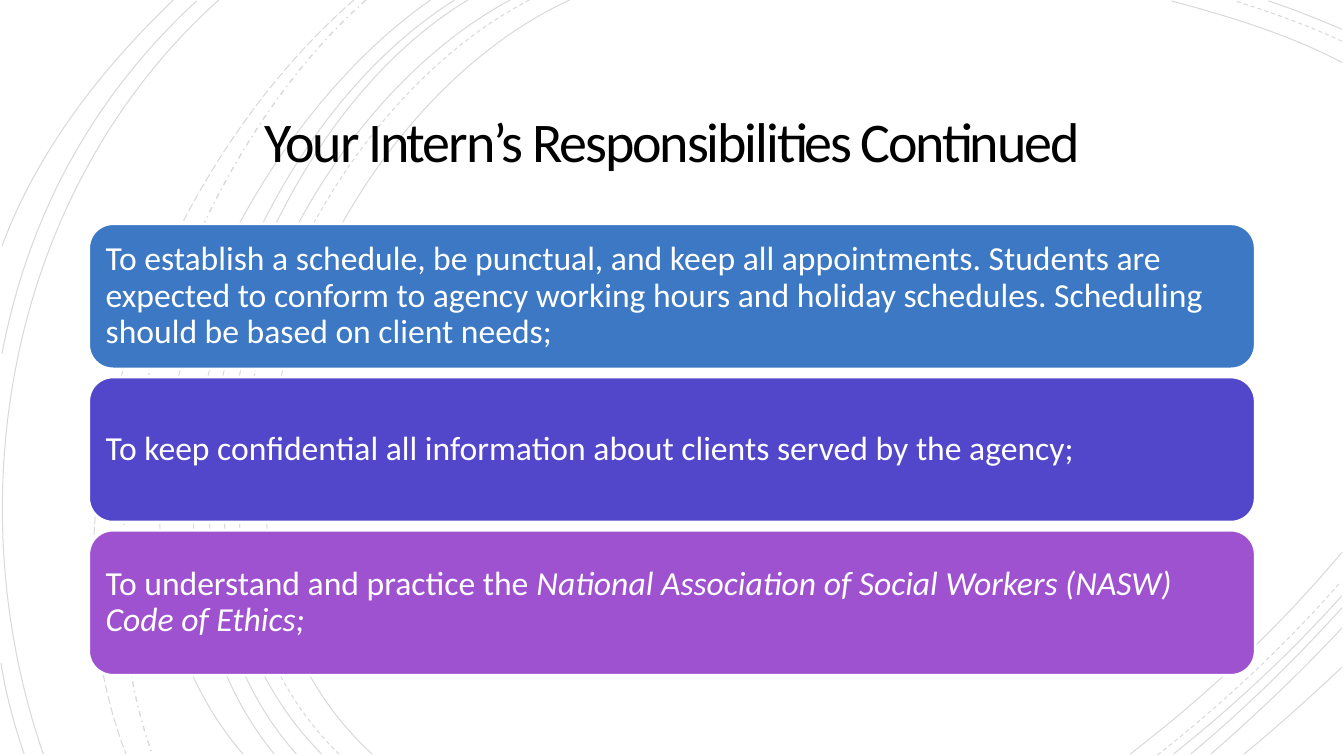
from pptx import Presentation, util as u
from pptx.dml.color import RGBColor
from pptx.enum import dml, shapes, text
from pptx.oxml.ns import qn
from lxml import etree

PX = 9144  # 100 px to the inch
SLIDE = (1333, 750)
COLORS = {"black": "000000", "white": "FFFFFF", "blue": "3C78C3",
          "indigo": "5247CA", "purple": "9F52D0"}
FONT = "Calibri"

# Content: text runs are (text, italic)
TITLE = [("Your Intern’s Responsibilities Continued", False)]
DUTIES = [
    ("blue", [("To establish a schedule, be punctual, and keep all appointments. "
               "Students are expected to conform to agency working hours and holiday "
               "schedules. Scheduling should be based on client needs;", False)]),
    ("indigo", [("To keep confidential all information about clients served by the "
                 "agency;", False)]),
    ("purple", [("To understand and practice the ", False),
                ("National Association of Social Workers (NASW) Code of Ethics;", True)]),
]

# Background arcs by dash: start, two control points, end
ARCS = {
    "SOLID": [
        ((565, 0), (315, 115), (143, 540), (369, 748)),
        ((1331, 62), (1278, 34), (1218, 16), (1162, 1)),
        ((1121, 748), (1197, 690), (1269, 622), (1331, 548)),
        ((506, 0), (270, 127), (110, 537), (319, 748)),
        ((1331, 29), (1307, 19), (1283, 9), (1258, 1)),
        ((1164, 748), (1223, 701), (1280, 648), (1331, 591)),
        ((464, 0), (244, 133), (110, 541), (294, 748)),
        ((1181, 748), (1234, 704), (1284, 655), (1331, 603)),
        ((451, 0), (231, 138), (97, 533), (272, 748)),
        ((1201, 748), (1246, 709), (1290, 667), (1331, 623)),
        ((427, 0), (217, 147), (53, 529), (241, 748)),
        ((1234, 748), (1267, 721), (1299, 692), (1331, 662)),
        ((217, 0), (11, 185), (-46, 490), (43, 748)),
        ((195, 1), (92, 96), (28, 214), (2, 351)),
        ((1, 658), (6, 689), (14, 719), (24, 748)),
        ((172, 0), (100, 69), (37, 150), (2, 244)),
    ],
    "DASH": [
        ((525, 0), (285, 125), (123, 537), (336, 748)),
        ((1331, 41), (1297, 25), (1260, 12), (1225, 1)),
        ((1148, 749), (1213, 698), (1275, 640), (1330, 577)),
    ],
    "DASH_DOT": [((363, 0), (176, 166), (65, 509), (151, 748))],
    "LONG_DASH": [((351, 0), (157, 169), (29, 499), (125, 748))],
}
ARC_ALPHA = "15000"

# Layout in px
TITLE_BOX = (192, 87, 949, 115)
CARD_LEFT, CARD_TOP, CARD_WIDTH, CARD_HEIGHT, CARD_PITCH = 88, 222, 1157, 144, 152
TITLE_FORMAT = {"inset": 25, "size": 40, "color": "black", "spacing": 0.85,
                "align": text.PP_ALIGN.CENTER, "tracking": "-150"}
DUTY_FORMAT = {"inset": 10, "size": 24, "color": "white", "spacing": 0.9,
               "align": text.PP_ALIGN.LEFT, "tracking": "0"}


def rgb(name):
    return RGBColor.from_string(COLORS[name])


def set_all(target, values):
    for name, value in values.items():
        setattr(target, name, value)


def add_filled(slide, kind, box, color):
    shape = slide.shapes.add_shape(kind, *(PX * n for n in box))
    shape.shadow.inherit = False
    shape.fill.solid()
    shape.fill.fore_color.rgb = rgb(color)
    shape.line.fill.background()
    return shape


def add_arc(slide, points, dash):
    start, *rest = points
    builder = slide.shapes.build_freeform(*start, scale=PX)
    builder.add_line_segments(rest, close=False)
    arc = builder.convert_to_shape()

    # Turn the three segments into one cubic curve
    segments = list(arc._element.iter(qn("a:lnTo")))
    outline = segments[0].getparent()
    curve = etree.SubElement(outline, qn("a:cubicBezTo"))
    for segment in segments:
        curve.append(segment[0])
        outline.remove(segment)

    arc.shadow.inherit = False
    arc.fill.background()
    arc.line.color.rgb = rgb("black")
    set_all(arc.line, {"width": u.Pt(1 if dash == "DASH_DOT" else 0.75),
                       "dash_style": getattr(dml.MSO_LINE, dash)})
    color = arc.line.fill._xPr.find(".//" + qn("a:srgbClr"))
    etree.SubElement(color, qn("a:alpha")).set("val", ARC_ALPHA)


def write(shape, runs, style):
    frame = shape.text_frame
    inset = style["inset"] * PX
    set_all(frame, {"word_wrap": True, "vertical_anchor": text.MSO_ANCHOR.MIDDLE,
                    "margin_left": inset, "margin_right": inset,
                    "margin_top": inset, "margin_bottom": inset})
    paragraph = frame.paragraphs[0]
    set_all(paragraph, {"alignment": style["align"], "line_spacing": style["spacing"]})
    for words, italic in runs:
        run = paragraph.add_run()
        run.text = words
        set_all(run.font, {"name": FONT, "size": u.Pt(style["size"]), "italic": italic})
        run.font.color.rgb = rgb(style["color"])
        run.font._element.set("spc", style["tracking"])


def add_card(slide, index, color, runs):
    box = (CARD_LEFT, CARD_TOP + index * CARD_PITCH, CARD_WIDTH, CARD_HEIGHT)
    card = add_filled(slide, shapes.MSO_SHAPE.ROUNDED_RECTANGLE, box, color)
    card.line.color.rgb = rgb("white")
    card.line.width = u.Pt(2)
    write(card, runs, DUTY_FORMAT)


def main():
    presentation = Presentation()
    set_all(presentation, {"slide_width": SLIDE[0] * PX, "slide_height": SLIDE[1] * PX})
    slide = presentation.slides.add_slide(presentation.slide_layouts[6])

    # White backdrop and arcs
    add_filled(slide, shapes.MSO_SHAPE.RECTANGLE, (0, 0, *SLIDE), "white")
    for dash, arcs in ARCS.items():
        for points in arcs:
            add_arc(slide, points, dash)

    # Title
    title = slide.shapes.add_textbox(*(PX * n for n in TITLE_BOX))
    write(title, TITLE, TITLE_FORMAT)

    # Responsibility cards
    for index, (color, runs) in enumerate(DUTIES):
        add_card(slide, index, color, runs)

    presentation.save("out.pptx")


if __name__ == "__main__":
    main()
